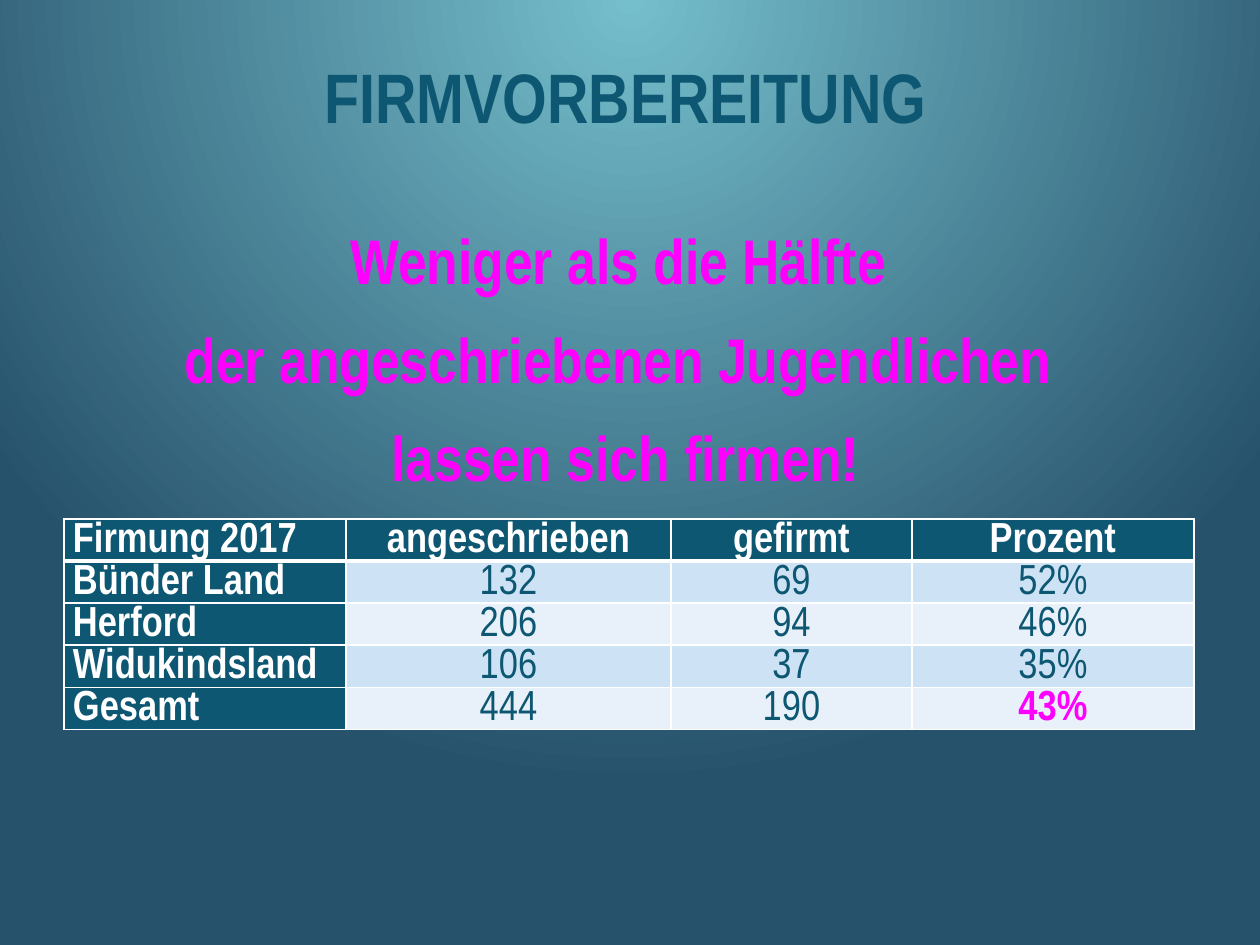
"""Builds the slide on confirmation preparation with its table of figures."""
from lxml.etree import SubElement
from pptx import Presentation
from pptx.dml.color import RGBColor
from pptx.enum.text import MSO_ANCHOR as Anchor, PP_ALIGN as Align
from pptx.oxml.ns import qn
from pptx.util import Pt

PX = 914400 // 126
FONT = "Arial Narrow"
COLORS = {
    "glow": "75BECB",
    "night": "27526C",
    "petrol": "0E5772",
    "magenta": "FF00FF",
    "white": "FFFFFF",
    "band": "CDE3F5",
    "pale": "E8F1FA",
}
MESSAGE = [
    "Weniger als die Hälfte ",
    "der angeschriebenen Jugendlichen ",
    "lassen sich firmen!",
]
COLUMN_WIDTHS = [282, 325, 241, 282]
ROW_HEIGHT = 42
ROWS = [
    ["Firmung 2017", "angeschrieben", "gefirmt", "Prozent"],
    ["Bünder Land", "132", "69", "52%"],
    ["Herford", "206", "94", "46%"],
    ["Widukindsland", "106", "37", "35%"],
    ["Gesamt", "444", "190", "43%"],
]


def rgb(name):
    return RGBColor.from_string(COLORS[name])


def write_text(frame, lines, size, color, bold=True, align=Align.CENTER,
               before=0, after=0, spacing=None):
    for index, line in enumerate(lines):
        paragraph = frame.add_paragraph() if index else frame.paragraphs[0]
        paragraph.alignment = align
        paragraph.space_before = Pt(before if index else 0)
        paragraph.space_after = Pt(after)
        paragraph.line_spacing = spacing
        run = paragraph.add_run()
        run.text = line
        run.font.name = FONT
        run.font.size = Pt(size)
        run.font.bold = bold
        run.font.color.rgb = rgb(color)


def add_text_box(slide, left, top, width, height, lines, anchor=Anchor.MIDDLE,
                 inset_top=6, **text_format):
    box = slide.shapes.add_textbox(left * PX, top * PX, width * PX, height * PX)
    frame = box.text_frame
    frame.word_wrap = True
    frame.vertical_anchor = anchor
    frame.margin_top = inset_top * PX
    write_text(frame, lines, **text_format)


def set_background(slide):
    fill = slide.background.fill
    fill.gradient()
    for stop, position, color in zip(fill.gradient_stops, (0, 1), ("glow", "night")):
        stop.position = position
        stop.color.rgb = rgb(color)
    gradient = slide.element.find(".//" + qn("a:gradFill"))
    gradient.remove(gradient.find(qn("a:lin")))
    path = SubElement(gradient, qn("a:path"), path="circle")
    SubElement(path, qn("a:fillToRect"), l="50000", t="0", r="50000", b="100000")


def set_borders(cell, **widths):
    properties = cell._tc.get_or_add_tcPr()
    for side in "LRTB":
        line = SubElement(properties, qn(f"a:ln{side}"), w=str(Pt(widths.get(side, 1))))
        fill = SubElement(line, qn("a:solidFill"))
        SubElement(fill, qn("a:srgbClr"), val=COLORS["white"])


def style_cell(cell, text, row, column):
    is_heading = row == 0 or column == 0
    is_result = row == len(ROWS) - 1 and column == len(COLUMN_WIDTHS) - 1
    set_borders(cell, T=3 if row == 1 else 1, B=3 if row == 0 else 1)
    cell.margin_left = cell.margin_right = 9 * PX
    cell.margin_top = cell.margin_bottom = 0
    cell.fill.solid()
    cell.fill.fore_color.rgb = rgb("petrol" if is_heading else "band" if row % 2 else "pale")
    color = "white" if is_heading else "magenta" if is_result else "petrol"
    write_text(cell.text_frame, [text], size=24, color=color,
               bold=is_heading or is_result, spacing=Pt(24),
               align=Align.CENTER if column else Align.LEFT)


def add_figures_table(slide, left, top):
    width, height = sum(COLUMN_WIDTHS), ROW_HEIGHT * len(ROWS)
    table = slide.shapes.add_table(len(ROWS), len(COLUMN_WIDTHS), left * PX, top * PX,
                                   width * PX, height * PX).table
    for column, column_width in zip(table.columns, COLUMN_WIDTHS):
        column.width = column_width * PX
    for row, texts in enumerate(ROWS):
        table.rows[row].height = ROW_HEIGHT * PX
        for column, text in enumerate(texts):
            style_cell(table.cell(row, column), text, row, column)


def main():
    presentation = Presentation()
    presentation.slide_width = 1260 * PX
    presentation.slide_height = 945 * PX
    slide = presentation.slides.add_slide(presentation.slide_layouts[6])
    set_background(slide)
    add_text_box(slide, 44, 33, 1163, 126, ["FIRMVORBEREITUNG"], size=40, color="petrol")
    add_text_box(slide, 44, 185, 1163, 527, MESSAGE, anchor=Anchor.TOP, inset_top=37,
                 size=36, color="magenta", before=7, after=6)
    add_figures_table(slide, 64, 519)
    presentation.save("out.pptx")


if __name__ == "__main__":
    main()
